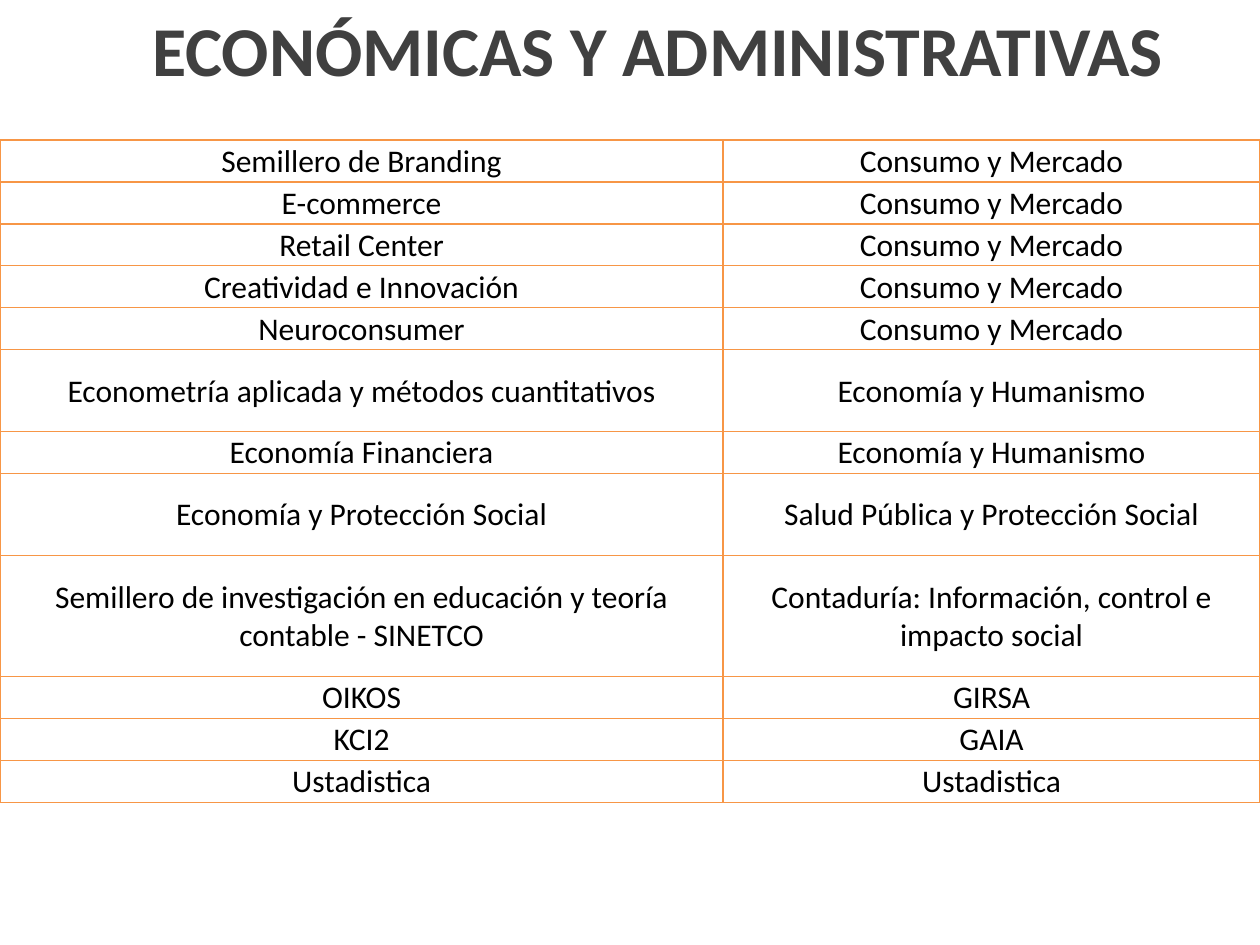
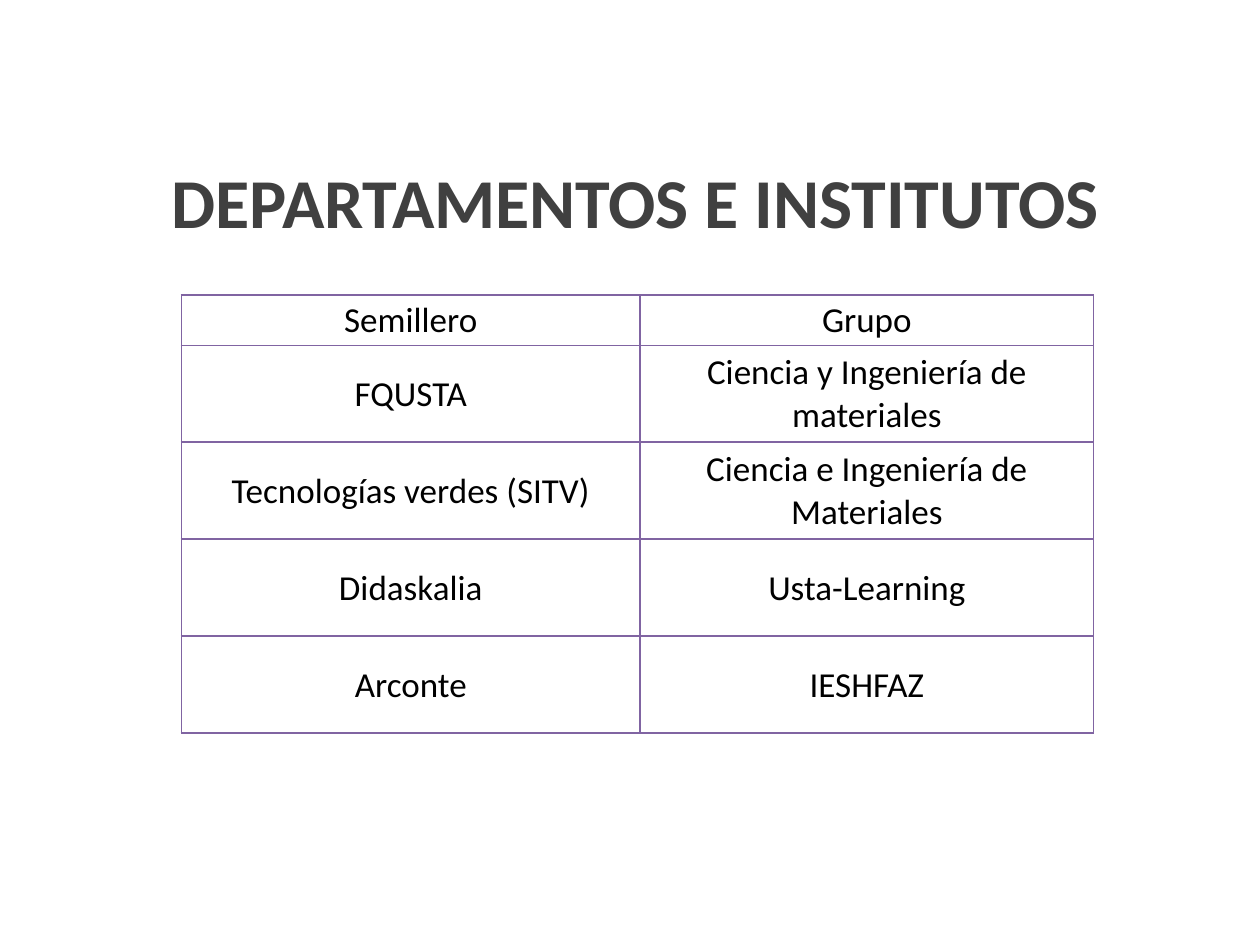
from lxml import etree
from pptx import Presentation
from pptx import util as u
from pptx.dml.color import RGBColor
from pptx.enum import text
from pptx.oxml.ns import qn

FONT = "Calibri"
TITLE_COLOR = "404040"
TEXT_COLOR = "000000"


def write(frame, content, size, color, bold=False, anchor=text.MSO_ANCHOR.MIDDLE):
    frame.word_wrap = True
    frame.vertical_anchor = anchor
    paragraph = frame.paragraphs[0]
    paragraph.alignment = text.PP_ALIGN.CENTER
    run = paragraph.add_run()
    run.text = content
    run.font.name = FONT
    run.font.size = u.Pt(size)
    run.font.bold = bold
    run.font.color.rgb = RGBColor.from_string(color)


def add_borders(cell, color):
    properties = cell._tc.get_or_add_tcPr()
    for position, side in enumerate(("a:lnL", "a:lnR", "a:lnT", "a:lnB")):
        line = etree.Element(qn(side), w=str(u.Pt(1)))
        fill = etree.SubElement(line, qn("a:solidFill"))
        etree.SubElement(fill, qn("a:srgbClr"), val=color)
        properties.insert(position, line)


# Content of each slide; row heights and column widths in inches
line_height = 1 / 3
pages = [
    {
        "title": "ECONÓMICAS Y ADMINISTRATIVAS",
        "title_at": (0.97, 0),
        "table_at": (0, 1.11),
        "columns": (5.74, 4.26),
        "size": 18,
        "border": "F79646",
        "rows": [
            (line_height, "Semillero de Branding", "Consumo y Mercado"),
            (line_height, "E-commerce", "Consumo y Mercado"),
            (line_height, "Retail Center", "Consumo y Mercado"),
            (line_height, "Creatividad e Innovación", "Consumo y Mercado"),
            (line_height, "Neuroconsumer", "Consumo y Mercado"),
            (0.65, "Econometría aplicada y métodos cuantitativos", "Economía y Humanismo"),
            (line_height, "Economía Financiera", "Economía y Humanismo"),
            (0.65, "Economía y Protección Social", "Salud Pública y Protección Social"),
            (0.96, "Semillero de investigación en educación y teoría contable - SINETCO",
             "Contaduría: Información, control e impacto social"),
            (line_height, "OIKOS", "GIRSA"),
            (line_height, "KCI2", "GAIA"),
            (line_height, "Ustadistica", "Ustadistica"),
        ],
    },
    {
        "title": "DEPARTAMENTOS E INSTITUTOS",
        "title_at": (0.79, 1.21),
        "table_at": (1.44, 2.34),
        "columns": (3.64, 3.6),
        "size": 20,
        "border": "8064A2",
        "rows": [
            (0.4, "Semillero", "Grupo"),
            (0.77, "FQUSTA", "Ciencia y Ingeniería de materiales"),
            (0.77, "Tecnologías verdes (SITV)", "Ciencia e Ingeniería de Materiales"),
            (0.77, "Didaskalia", "Usta-Learning"),
            (0.77, "Arconte", "IESHFAZ"),
        ],
    },
]

presentation = Presentation()
presentation.slide_width = u.Inches(10)
presentation.slide_height = u.Inches(7.5)

for page in pages:
    slide = presentation.slides.add_slide(presentation.slide_layouts[6])

    # Title
    left, top = page["title_at"]
    title = slide.shapes.add_textbox(u.Inches(left), u.Inches(top), u.Inches(8.5), u.Inches(1.49))
    write(title.text_frame, page["title"], 40, TITLE_COLOR, bold=True, anchor=text.MSO_ANCHOR.TOP)

    # Table of research seedbeds and their groups
    left, top = page["table_at"]
    rows, columns = page["rows"], page["columns"]
    table = slide.shapes.add_table(
        len(rows), len(columns), u.Inches(left), u.Inches(top),
        u.Inches(sum(columns)), u.Inches(sum(row[0] for row in rows))).table
    table.first_row = False
    table.horz_banding = False
    for column, width in zip(table.columns, columns):
        column.width = u.Inches(width)
    for row, (height, *names) in zip(table.rows, rows):
        row.height = u.Inches(height)
        for cell, name in zip(row.cells, names):
            cell.margin_left = cell.margin_right = cell.margin_top = u.Inches(0.01)
            cell.margin_bottom = 0
            cell.fill.background()
            add_borders(cell, page["border"])
            write(cell.text_frame, name, page["size"], TEXT_COLOR)
            cell.vertical_anchor = text.MSO_ANCHOR.MIDDLE

presentation.save("out.pptx")
